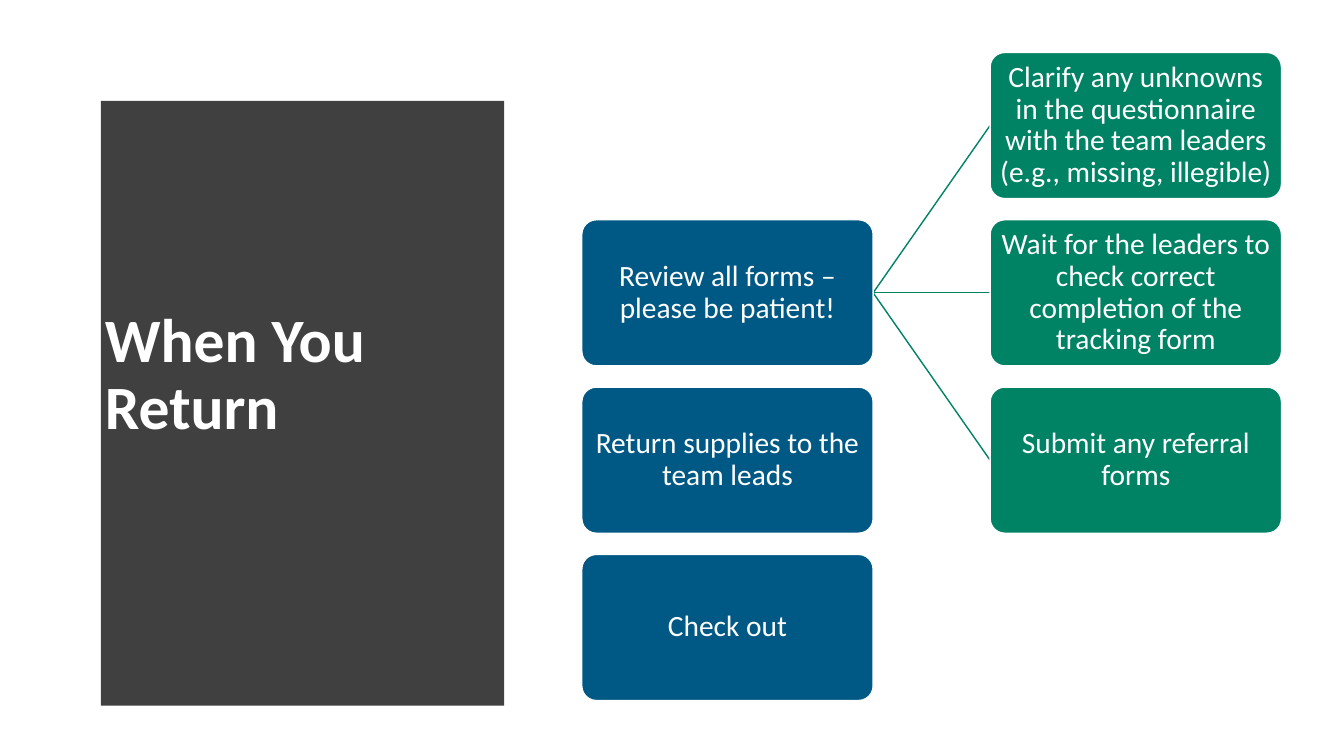
"""Build the "When You Return" slide: a curved title panel and a task tree."""
from lxml import etree
from pptx import Presentation
from pptx.dml.color import RGBColor
from pptx.enum import shapes, text
from pptx.oxml import ns
from pptx.util import Inches, Pt

TITLE = "When You Return"
TASKS = ["Review all forms – please be patient!",
         "Return supplies to the team leads",
         "Check out"]
STEPS = ["Clarify any unknowns in the questionnaire with the team leaders "
         "(e.g., missing, illegible)",
         "Wait for the leaders to check correct completion of the tracking form",
         "Submit any referral forms"]
WHITE, GREY, BLUE, GREEN = "FFFFFF", "404040", "005984", "008265"
FONT = "Calibri"
LEFT, TOP, EDGE, BULGE, BASE = 0.53, 0.52, 5.08, 0.24, 6.96
WIDE, HIGH, PITCH = 2.89, 1.45, 1.66
TASK_X, STEP_X = 5.77, 9.82
TASK_Y = TOP + PITCH


def color(value):
    return RGBColor.from_string(value)


def write(frame, words, size, align, bold=False):
    frame.word_wrap = True
    frame.vertical_anchor = text.MSO_ANCHOR.MIDDLE
    para = frame.paragraphs[0]
    para.alignment = align
    para.line_spacing = 0.9
    run = para.add_run()
    run.text = words
    font = run.font
    font.name, font.size, font.bold = FONT, Pt(size), bold
    font.color.rgb = color(WHITE)


def add_panel(slide):
    mid, half, count = (TOP + BASE) / 2, (BASE - TOP) / 2, 40
    curve = []
    for i in range(count + 1):
        t = 2 * i / count - 1
        curve.append((EDGE + BULGE * (1 - t * t), mid + half * t))
    pen = slide.shapes.build_freeform(LEFT, TOP, scale=Inches(1))
    pen.add_line_segments(curve + [(LEFT, BASE)], close=True)
    panel = pen.convert_to_shape()
    panel.shadow.inherit = False
    panel.fill.solid()
    panel.fill.fore_color.rgb = color(GREY)
    panel.line.fill.background()
    return panel


def add_box(slide, words, x, y, fill):
    box = slide.shapes.add_shape(
        shapes.MSO_SHAPE.ROUNDED_RECTANGLE,
        Inches(x), Inches(y), Inches(WIDE), Inches(HIGH))
    box.adjustments[0] = 0.1
    box.shadow.inherit = False
    box.fill.solid()
    box.fill.fore_color.rgb = color(fill)
    box.line.color.rgb = color(WHITE)
    box.line.width = Pt(1)
    frame = box.text_frame
    frame.margin_left = frame.margin_right = Inches(0.01)
    frame.margin_top = frame.margin_bottom = Inches(0.01)
    write(frame, words, 21, text.PP_ALIGN.CENTER)


def add_link(slide, y):
    link = slide.shapes.add_connector(
        shapes.MSO_CONNECTOR.STRAIGHT,
        Inches(TASK_X + WIDE), Inches(TASK_Y + HIGH / 2),
        Inches(STEP_X), Inches(y + HIGH / 2))
    link.line.color.rgb = color(GREEN)
    link.line.width = Pt(1)
    etree.SubElement(link.element.spPr, ns.qn("a:effectLst"))


def main():
    deck = Presentation()
    deck.slide_width, deck.slide_height = Inches(13.33), Inches(7.5)
    slide = deck.slides.add_slide(deck.slide_layouts[5])
    title = slide.shapes.title
    title.left, title.top = Inches(0.94), Inches(1.11)
    title.width, title.height = Inches(3.74), Inches(5.24)
    write(title.text_frame, TITLE, 44, text.PP_ALIGN.LEFT, True)
    title.element.addprevious(add_panel(slide).element)
    for i, step in enumerate(STEPS):
        y = TOP + i * PITCH
        add_link(slide, y)
        add_box(slide, step, STEP_X, y, GREEN)
    for i, task in enumerate(TASKS):
        add_box(slide, task, TASK_X, TASK_Y + i * PITCH, BLUE)
    deck.save("out.pptx")


if __name__ == "__main__":
    main()
